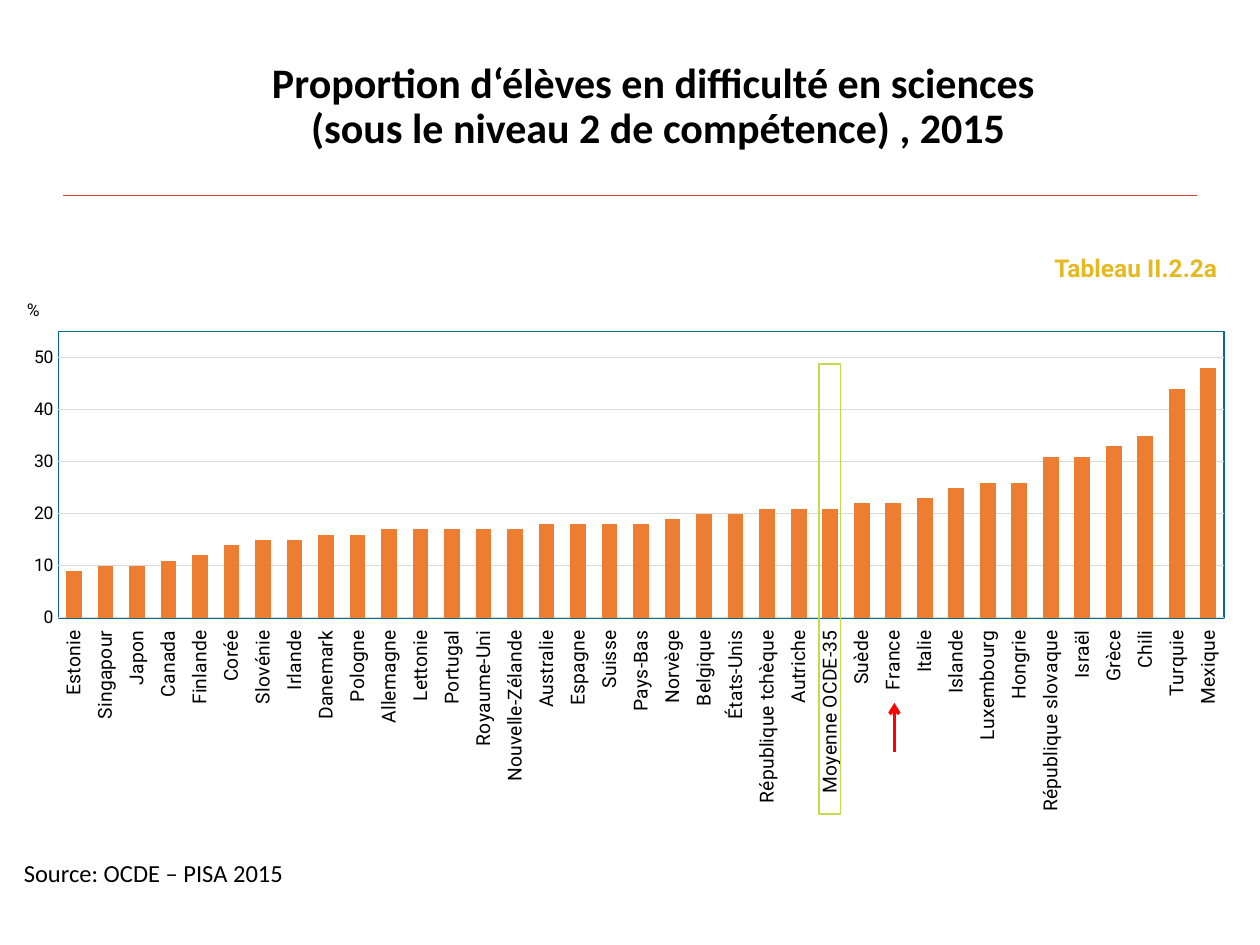
from dataclasses import dataclass

import pptx
import pptx.chart.data
import pptx.dml.color
import pptx.enum.chart
import pptx.enum.shapes
import pptx.enum.text
import pptx.oxml
import pptx.oxml.ns
import pptx.util
from pptx.util import Cm

ALIGN = pptx.enum.text.PP_ALIGN
ANCHOR = pptx.enum.text.MSO_ANCHOR
NAMESPACES = pptx.oxml.ns.nsdecls("a", "c")

LOW_PERFORMERS = {
    "Estonie": 9, "Singapour": 10, "Japon": 10, "Canada": 11, "Finlande": 12,
    "Corée": 14, "Slovénie": 15, "Irlande": 15, "Danemark": 16, "Pologne": 16,
    "Allemagne": 17, "Lettonie": 17, "Portugal": 17, "Royaume-Uni": 17,
    "Nouvelle-Zélande": 17, "Australie": 18, "Espagne": 18, "Suisse": 18,
    "Pays-Bas": 18, "Norvège": 19, "Belgique": 20, "États-Unis": 20,
    "République tchèque": 21, "Autriche": 21, "Moyenne OCDE-35": 21,
    "Suède": 22, "France": 22, "Italie": 23, "Islande": 25, "Luxembourg": 26,
    "Hongrie": 26, "République slovaque": 31, "Israël": 31, "Grèce": 33,
    "Chili": 35, "Turquie": 44, "Mexique": 48,
}


@dataclass(frozen=True)
class Box:
    left: float
    top: float
    width: float
    height: float

    def lengths(self) -> list:
        return [Cm(v) for v in (self.left, self.top, self.width, self.height)]


@dataclass(frozen=True)
class Caption:
    box: Box
    lines: tuple
    size: float
    face: str
    color: str = "000000"
    bold: bool = False
    align: ALIGN = ALIGN.LEFT
    anchor: ANCHOR = ANCHOR.TOP
    spacing: float = 1.0


@dataclass(frozen=True)
class Stroke:
    start: tuple
    end: tuple
    color: str
    weight: float
    arrow: bool = False


CAPTIONS = (
    Caption(Box(1.75, 0.33, 23.04, 3.68),
            ("Proportion d‘élèves en difficulté en sciences ",
             "(sous le niveau 2 de compétence) , 2015"),
            24, "Calibri", bold=True, align=ALIGN.CENTER,
            anchor=ANCHOR.MIDDLE, spacing=0.9),
    Caption(Box(20.6, 4.98, 4.19, 0.86), ("Tableau II.2.2a",),
            14, "Roboto", "E4B921", bold=True, align=ALIGN.RIGHT),
    Caption(Box(0.23, 17.17, 7.11, 0.71), ("Source: OCDE – PISA 2015",),
            14, "Calibri"),
)
TITLE_RULE = Stroke((1.27, 3.94), (24.13, 3.94), "D04432", 1)
FRANCE_ARROW = Stroke((18.03, 15.16), (18.03, 14.17), "FF0000", 2, arrow=True)
CHART_BOX = Box(0.23, 5.84, 24.82, 10.57)
AVERAGE_BOX = Box(16.51, 7.34, 0.43, 9.07)


def rgb(color: str) -> pptx.dml.color.RGBColor:
    return pptx.dml.color.RGBColor.from_string(color)


def set_line(line, color: str, weight: float) -> None:
    line.color.rgb = rgb(color)
    line.width = pptx.util.Pt(weight)


def set_font(font, face: str, size: float, color: str = "000000", bold: bool = False) -> None:
    font.name = face
    font.size = pptx.util.Pt(size)
    font.color.rgb = rgb(color)
    font.bold = bold


def add_caption(slide, caption: Caption) -> None:
    frame = slide.shapes.add_textbox(*caption.box.lengths()).text_frame
    frame.word_wrap = True
    frame.vertical_anchor = caption.anchor
    paragraph = frame.paragraphs[0]
    paragraph.alignment = caption.align
    paragraph.line_spacing = caption.spacing
    for index, line in enumerate(caption.lines):
        if index:
            paragraph.add_line_break()
        run = paragraph.add_run()
        run.text = line
        set_font(run.font, caption.face, caption.size, caption.color, caption.bold)


def add_stroke(slide, stroke: Stroke) -> None:
    connector = slide.shapes.add_connector(
        pptx.enum.shapes.MSO_CONNECTOR.STRAIGHT,
        *(Cm(v) for v in stroke.start + stroke.end))
    set_line(connector.line, stroke.color, stroke.weight)
    properties = connector._element.spPr
    if stroke.arrow:
        properties.find(pptx.oxml.ns.qn("a:ln")).append(
            pptx.oxml.parse_xml(f'<a:tailEnd {NAMESPACES} type="arrow"/>'))
    properties.append(pptx.oxml.parse_xml(f"<a:effectLst {NAMESPACES}/>"))


def place(parent, position: int, inner: bool = False, **fractions: float) -> None:
    for automatic in parent.findall(pptx.oxml.ns.qn("c:layout")):
        parent.remove(automatic)
    target = '<c:layoutTarget val="inner"/>' if inner else ""
    modes = "".join(f'<c:{key}Mode val="edge"/>' for key in ("x", "y"))
    values = "".join(f'<c:{key} val="{value}"/>' for key, value in fractions.items())
    parent.insert(position, pptx.oxml.parse_xml(
        f"<c:layout {NAMESPACES}><c:manualLayout>{target}{modes}{values}"
        "</c:manualLayout></c:layout>"))


def style_axes(chart) -> None:
    countries, percent = chart.category_axis, chart.value_axis
    for axis, size in ((countries, 11), (percent, 10)):
        axis.major_tick_mark = pptx.enum.chart.XL_TICK_MARK.NONE
        axis.minor_tick_mark = pptx.enum.chart.XL_TICK_MARK.NONE
        set_font(axis.tick_labels.font, "Roboto", size)
    countries.tick_label_position = pptx.enum.chart.XL_TICK_LABEL_POSITION.LOW
    set_line(countries.format.line, "D9D9D9", 0.75)
    rotation = countries._element.find(pptx.oxml.ns.qn("c:txPr")).bodyPr
    rotation.set("rot", "-5400000")
    rotation.set("vert", "horz")

    percent.minimum_scale, percent.maximum_scale, percent.major_unit = 0, 55, 10
    percent.tick_labels.number_format = "0"
    percent.tick_labels.number_format_is_linked = False
    percent.format.line.fill.background()
    set_line(percent.major_gridlines.format.line, "D9D9D9", 0.75)
    unit = percent.axis_title.text_frame
    unit._txBody.bodyPr.set("rot", "0")
    run = unit.paragraphs[0].add_run()
    run.text = "%"
    set_font(run.font, "Roboto", 10)
    place(percent.axis_title._element, 1, x=0.01, y=0.01)


def add_country_chart(slide) -> None:
    data = pptx.chart.data.CategoryChartData(number_format="0")
    data.categories = list(LOW_PERFORMERS)
    data.add_series("Series 1", list(LOW_PERFORMERS.values()))
    chart = slide.shapes.add_chart(
        pptx.enum.chart.XL_CHART_TYPE.COLUMN_CLUSTERED, *CHART_BOX.lengths(), data).chart
    chart.has_legend = False
    chart.has_title = False
    set_font(chart.font, "Roboto", 10)
    style_axes(chart)

    columns = chart.plots[0]
    columns.gap_width, columns.overlap = 100, 50
    columns.vary_by_categories = False
    fill = columns.series[0].format.fill
    fill.solid()
    fill.fore_color.rgb = rgb("ED7D31")

    plot_area = chart._chartSpace.chart.plotArea
    place(plot_area, 0, inner=True, x=0.038, y=0.08, w=0.947, h=0.546)
    plot_area.append(pptx.oxml.parse_xml(
        f'<c:spPr {NAMESPACES}><a:noFill/><a:ln w="9525"><a:solidFill>'
        '<a:srgbClr val="006E8C"/></a:solidFill></a:ln></c:spPr>'))


def add_average_frame(slide) -> None:
    frame = slide.shapes.add_shape(
        pptx.enum.shapes.MSO_SHAPE.RECTANGLE, *AVERAGE_BOX.lengths())
    frame.shadow.inherit = False
    frame.fill.background()
    set_line(frame.line, "C6DA50", 0.75)


def main() -> None:
    presentation = pptx.Presentation()
    presentation.slide_width, presentation.slide_height = Cm(25.4), Cm(19.05)
    slide = presentation.slides.add_slide(presentation.slide_layouts[6])
    title, table_label, source = CAPTIONS
    add_stroke(slide, TITLE_RULE)
    add_caption(slide, title)
    add_caption(slide, table_label)
    add_country_chart(slide)
    add_average_frame(slide)
    add_stroke(slide, FRANCE_ARROW)
    add_caption(slide, source)
    presentation.save("out.pptx")


if __name__ == "__main__":
    main()
